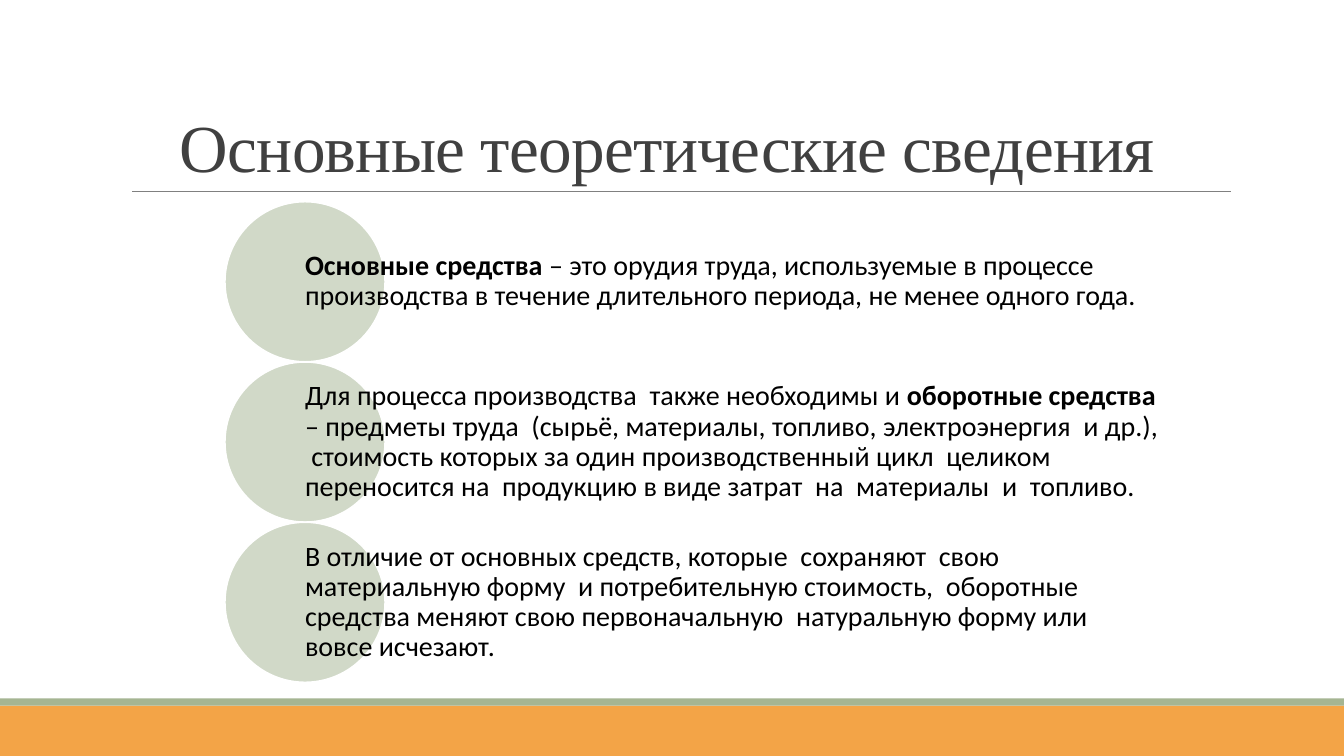
from lxml import etree
from pptx import Presentation
from pptx.dml.color import RGBColor
from pptx.enum.shapes import MSO_CONNECTOR, MSO_SHAPE
from pptx.enum.text import MSO_ANCHOR, PP_ALIGN
from pptx.oxml.ns import qn
from pptx.util import Inches, Pt

RECT, OVAL = MSO_SHAPE.RECTANGLE, MSO_SHAPE.OVAL
LINE = MSO_CONNECTOR.STRAIGHT
MIDDLE, BOTTOM = MSO_ANCHOR.MIDDLE, MSO_ANCHOR.BOTTOM
LEFT, CENTER = PP_ALIGN.LEFT, PP_ALIGN.CENTER

TITLE = "Основные теоретические сведения "
# Each item is a list of (text, bold) runs
ITEMS = [
    [("Основные средства", True),
     (" – это орудия труда, используемые в процессе  производства в течение "
      "длительного периода, не менее одного года.", False)],
    [("Для процесса производства  также необходимы и ", False),
     ("оборотные средства", True),
     (" – предметы труда  (сырьё, материалы, топливо, электроэнергия  и др.),  "
      "стоимость которых за один производственный цикл  целиком переносится на  "
      "продукцию в виде затрат  на  материалы  и  топливо.", False)],
    [("В отличие от основных средств, которые  сохраняют  свою материальную "
      "форму  и потребительную стоимость,  оборотные средства меняют свою "
      "первоначальную  натуральную форму или  вовсе исчезают.", False)],
]
COLORS = {"orange": "F3A447", "green": "A5B592", "rule": "808080",
          "title": "404040", "text": "000000", "white": "FFFFFF"}

WIDE, HIGH = 13.33, 7.5
BAND, STRIP = 0.5, 0.07
DISC = 1.59
DISC_X, TOP = 2.23, 2
TEXT_X, TEXT_W = DISC_X + DISC / 2, 8.49


def color(name):
    return RGBColor.from_string(COLORS[name])


def box(x, y, w, h):
    return [Inches(v) for v in (x, y, w, h)]


def write(frame, runs, font, size, tint, align=LEFT, anchor=MIDDLE,
          lead=0.9, after=0, track=0):
    """Fill a text frame with one paragraph of (text, bold) runs."""
    frame.word_wrap = True
    frame.vertical_anchor = anchor
    para = frame.paragraphs[0]
    para.alignment, para.line_spacing = align, lead
    para.space_after = Pt(after)
    for text, bold in runs:
        run = para.add_run()
        run.text = text
        run.font.name, run.font.size, run.font.bold = font, Pt(size), bold
        run.font.color.rgb = color(tint)
        if track:
            run.font._element.set("spc", str(int(track * 100)))


def draw(kind, place, fill, edge=None, alpha=None):
    shape = slide.shapes.add_shape(kind, *place)
    shape.shadow.inherit = False
    shape.fill.solid()
    shape.fill.fore_color.rgb = color(fill)
    if edge:
        shape.line.color.rgb, shape.line.width = color(edge), Pt(1.25)
    else:
        shape.line.fill.background()
    if alpha:
        tone = shape._element.spPr.find(qn("a:solidFill"))[0]
        etree.SubElement(tone, qn("a:alpha")).set("val", str(alpha * 1000))


deck = Presentation()
deck.slide_width, deck.slide_height = Inches(WIDE), Inches(HIGH)
slide = deck.slides.add_slide(deck.slide_layouts[5])

draw(RECT, box(0, HIGH - BAND, WIDE, BAND), "orange")
draw(RECT, box(0, HIGH - BAND - STRIP, WIDE, STRIP), "green")

rule = slide.shapes.add_connector(
    LINE, Inches(1.31), Inches(1.9), Inches(12.21), Inches(1.9))
rule.line.color.rgb, rule.line.width = color("rule"), Pt(0.5)
etree.SubElement(rule._element.spPr, qn("a:effectLst"))

title = slide.shapes.title
title.left, title.top, title.width, title.height = box(1.2, 0.31, 11, 1.59)
write(title.text_frame, [(TITLE, False)], "Times New Roman", 48, "title",
      align=CENTER, anchor=BOTTOM, lead=0.85, track=-0.5)

for row, runs in enumerate(ITEMS):
    y = TOP + row * DISC
    draw(OVAL, box(DISC_X, y, DISC, DISC), "green", edge="white", alpha=50)
    frame = slide.shapes.add_textbox(*box(TEXT_X, y, TEXT_W, DISC)).text_frame
    frame.margin_left = frame.margin_right = 0
    frame.margin_top = frame.margin_bottom = Inches(0.03)
    write(frame, runs, "Calibri", 20, "text", after=7)

deck.save("out.pptx")
